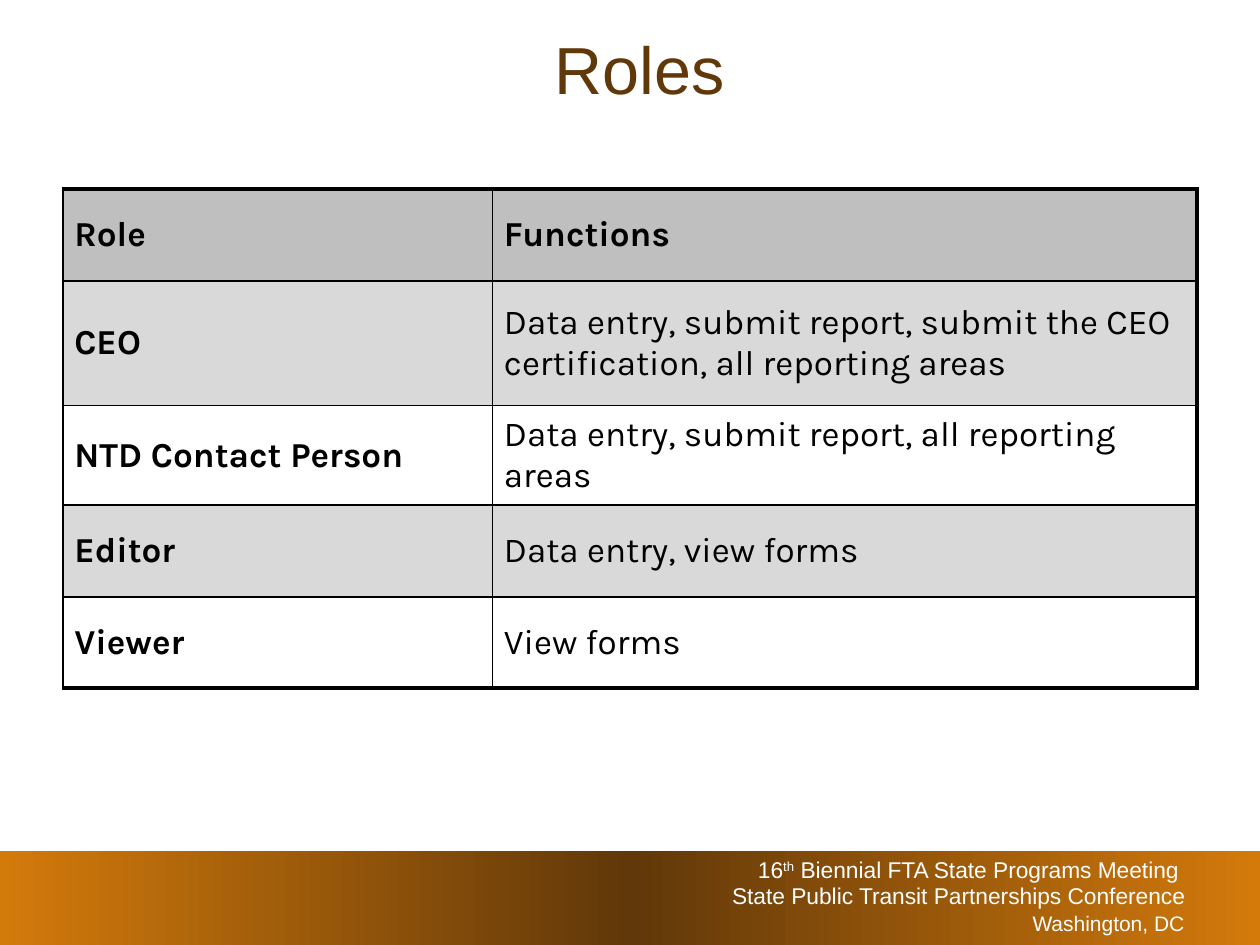
import copy

import pptx
import pptx.dml.color
import pptx.enum.dml
import pptx.enum.shapes
import pptx.enum.text
import pptx.oxml.ns
import pptx.util
from lxml import etree

WIDTH, HEIGHT = 10, 7.5
COLORS = {
    "orange": "D37A0B",
    "brown": "613809",
    "white": "FFFFFF",
    "black": "000000",
    "header": "BFBFBF",
    "band": "D9D9D9",
}
COLUMNS = [3.41, 5.59]
ROW_HEIGHTS = [0.73, 0.99, 0.79, 0.73, 0.72]
ROLES = [
    ("Role", "Functions"),
    ("CEO", "Data entry, submit report, submit the CEO certification, all reporting areas"),
    ("NTD Contact Person", "Data entry, submit report, all reporting areas"),
    ("Editor", "Data entry, view forms"),
    ("Viewer", "View forms"),
]
THIN, THICK = 1, 2.25
ALIGN = pptx.enum.text.PP_ALIGN
ANCHOR = pptx.enum.text.MSO_ANCHOR


def rgb(name):
    return pptx.dml.color.RGBColor.from_string(COLORS[name])


def box(left, top, width, height):
    return [pptx.util.Inches(v) for v in (left, top, width, height)]


def write(p, text, font="Arial", size=20, color="black", bold=False,
          align=ALIGN.LEFT, spacing=None, raised=False):
    """Add one run to paragraph p and format both."""
    p.alignment = align
    if spacing:
        p.line_spacing = pptx.util.Pt(spacing)
    r = p.add_run()
    r.text = text
    r.font.name = font
    r.font.size = pptx.util.Pt(size)
    r.font.bold = bold
    r.font.color.rgb = rgb(color)
    if raised:
        r.font._element.set("baseline", "30000")


def add_text_frame(slide, left, top, width, height, anchor=ANCHOR.TOP):
    tf = slide.shapes.add_textbox(*box(left, top, width, height)).text_frame
    tf.word_wrap = True
    tf.vertical_anchor = anchor
    return tf


def add_footer_band(slide):
    band = slide.shapes.add_shape(pptx.enum.shapes.MSO_SHAPE.RECTANGLE,
                                  *box(0, 0.9 * HEIGHT, WIDTH, 0.1 * HEIGHT))
    band.shadow.inherit = False
    band.line.fill.background()
    band.fill.gradient()
    band.fill.gradient_angle = 0
    first = band.fill.gradient_stops[0]._gs
    first.addnext(copy.deepcopy(first))
    for stop, position, color in zip(band.fill.gradient_stops, (0, 0.5, 1),
                                     ("orange", "brown", "orange")):
        stop.position = position
        stop.color.rgb = rgb(color)


def add_footer_text(slide):
    tf = add_text_frame(slide, 0.25 * WIDTH, 0.9 * HEIGHT, 0.7 * WIDTH, 0.74)
    style = dict(size=13, color="white", align=ALIGN.RIGHT, spacing=15)
    meeting = tf.paragraphs[0]
    write(meeting, "16", **style)
    write(meeting, "th", raised=True, **style)
    write(meeting, " Biennial FTA State Programs Meeting ", **style)
    conference = tf.add_paragraph()
    write(conference, "State Public Transit Partnerships Conference", **style)
    conference.add_line_break()
    write(conference, "Washington, DC", **{**style, "size": 12})


def add_title(slide):
    tf = add_text_frame(slide, 0.58, 0.17, 0.9 * WIDTH, 0.73, ANCHOR.MIDDLE)
    write(tf.paragraphs[0], "Roles", size=38, color="brown", align=ALIGN.CENTER)


def set_borders(cell, **widths):
    """Draw black borders; keys are L, R, T, B in schema order."""
    tc_pr = cell._tc.get_or_add_tcPr()
    qn = pptx.oxml.ns.qn
    for side, width in widths.items():
        ln = etree.SubElement(tc_pr, qn("a:ln" + side), w=str(pptx.util.Pt(width)))
        fill = etree.SubElement(ln, qn("a:solidFill"))
        etree.SubElement(fill, qn("a:srgbClr"), val=COLORS["black"])


def row_color(row):
    if row == 0:
        return "header"
    return "band" if row % 2 else "white"


def add_roles_table(slide):
    frame = slide.shapes.add_table(len(ROLES), len(COLUMNS),
                                   *box(0.5, 1.5, sum(COLUMNS), sum(ROW_HEIGHTS)))
    table = frame.table
    for column, width in zip(table.columns, COLUMNS):
        column.width = pptx.util.Inches(width)
    for row, height in zip(table.rows, ROW_HEIGHTS):
        row.height = pptx.util.Inches(height)
    last_row, last_col = len(ROLES) - 1, len(COLUMNS) - 1
    for i, texts in enumerate(ROLES):
        for j, text in enumerate(texts):
            cell = table.cell(i, j)
            set_borders(cell, L=THIN,
                        R=THICK if j == last_col else THIN,
                        T=THICK if i == 0 else THIN,
                        B=THICK if i == last_row else THIN)
            cell.fill.solid()
            cell.fill.fore_color.rgb = rgb(row_color(i))
            cell.vertical_anchor = ANCHOR.MIDDLE
            cell.margin_left = cell.margin_right = pptx.util.Inches(0.09)
            write(cell.text_frame.paragraphs[0], text, font="Karla",
                  bold=i == 0 or j == 0)


def main():
    prs = pptx.Presentation()
    prs.slide_width = pptx.util.Inches(WIDTH)
    prs.slide_height = pptx.util.Inches(HEIGHT)
    slide = prs.slides.add_slide(prs.slide_layouts[6])
    add_footer_band(slide)
    add_footer_text(slide)
    add_title(slide)
    add_roles_table(slide)
    prs.save("out.pptx")


if __name__ == "__main__":
    main()
